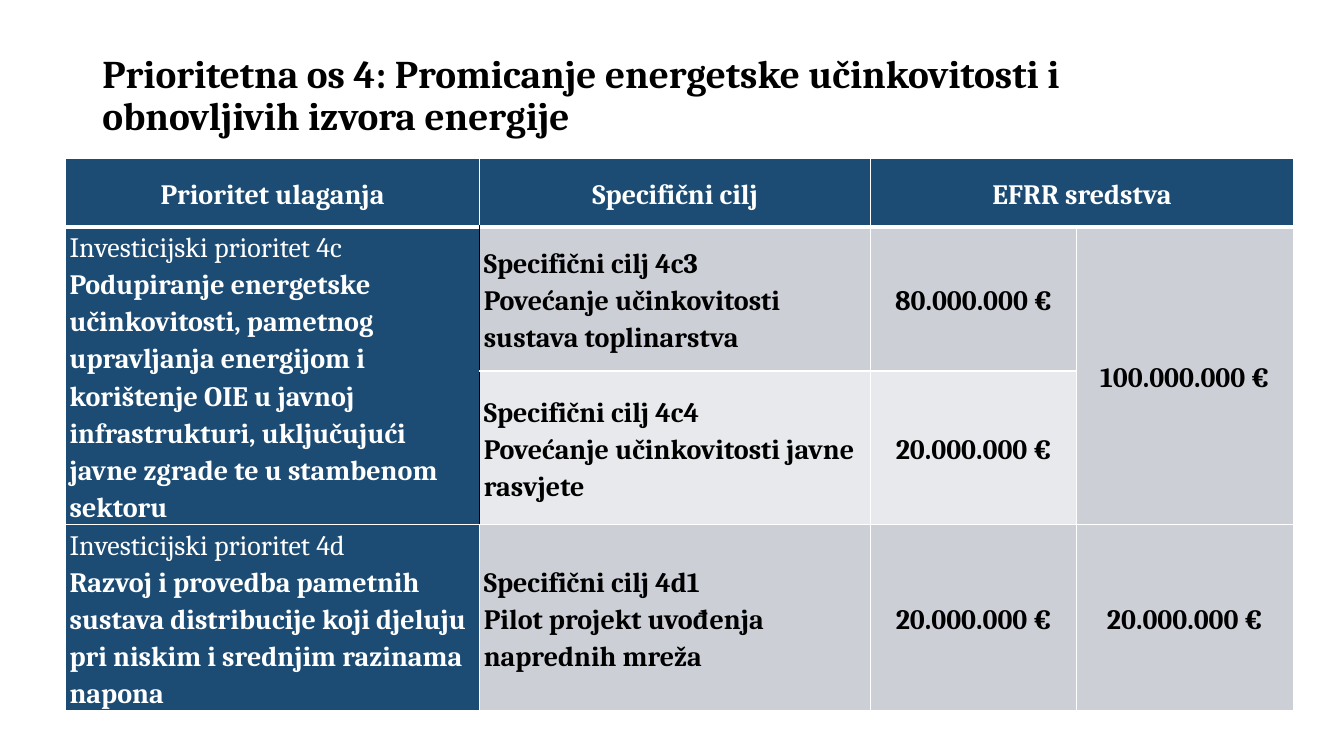
from pptx import Presentation
from pptx.dml.color import RGBColor
from pptx.enum.text import MSO_ANCHOR as ANCHOR, MSO_AUTO_SIZE as AUTO, PP_ALIGN as ALIGN
from pptx.oxml.ns import qn
from pptx.util import Pt
from lxml.etree import SubElement

NAVY = RGBColor(0x1C, 0x4C, 0x74)
GREY = RGBColor(0xCC, 0xD0, 0xD6)
PALE = RGBColor(0xE7, 0xE9, 0xEC)
WHITE = RGBColor(0xFF, 0xFF, 0xFF)
BLACK = RGBColor(0, 0, 0)

COLS = [295.9, 279.4, 146.9, 154.8]
ROWS = [49, 103, 101.5, 100.8]
CELLS = [
    [["Prioritet ulaganja"], ["Specifični cilj"], ["EFRR sredstva"], None],
    [["Investicijski prioritet 4c",
      "Podupiranje energetske učinkovitosti, pametnog upravljanja energijom i "
      "korištenje OIE u javnoj infrastrukturi, uključujući javne zgrade te u "
      "stambenom sektoru"],
     ["Specifični cilj 4c3", "Povećanje učinkovitosti sustava toplinarstva"],
     ["80.000.000 €"], ["100.000.000 €"]],
    [None,
     ["Specifični cilj 4c4", "Povećanje učinkovitosti javne rasvjete"],
     ["20.000.000 €"], None],
    [["Investicijski prioritet 4d",
      "Razvoj i provedba pametnih sustava distribucije koji djeluju pri niskim "
      "i srednjim razinama napona"],
     ["Specifični cilj 4d1", "Pilot projekt uvođenja naprednih mreža"],
     ["20.000.000 €"], ["20.000.000 €"]],
]
MERGES = [((0, 2), (0, 3)), ((1, 0), (2, 0)), ((1, 3), (2, 3))]


class SlideBuilder:
    font = "Cambria"
    cell_format = {
        "vertical_anchor": ANCHOR.MIDDLE,
        "margin_left": Pt(2.9), "margin_right": Pt(2.9),
        "margin_top": Pt(0.7), "margin_bottom": Pt(0),
    }

    def __init__(self, slide):
        self.slide = slide

    def apply(self, target, values):
        for name, value in values.items():
            setattr(target, name, value)

    def paragraph(self, p, text, size, color, bold, align, spacing):
        self.apply(p, {"alignment": align, "line_spacing": spacing})
        r = p.add_run()
        r.text = text
        self.apply(r.font, {"name": self.font, "size": Pt(size), "bold": bold})
        r.font.color.rgb = color

    def title(self, text, left, top, width, height):
        sp = self.slide.shapes.title
        self.apply(sp, {"left": Pt(left), "top": Pt(top),
                        "width": Pt(width), "height": Pt(height)})
        tf = sp.text_frame
        self.apply(tf, {"word_wrap": True, "auto_size": AUTO.NONE,
                        "vertical_anchor": ANCHOR.MIDDLE})
        self.paragraph(tf.paragraphs[0], text, 28, BLACK, True, ALIGN.LEFT, 0.9)

    def borders(self, cell, lines):
        tc_pr = cell._tc.get_or_add_tcPr()
        for side, (color, width) in lines.items():
            ln = SubElement(tc_pr, qn(f"a:ln{side}"), w=str(Pt(width)))
            fill = SubElement(ln, qn("a:solidFill"))
            SubElement(fill, qn("a:srgbClr"), val=str(color))

    def cell(self, cell, row, col, texts):
        self.apply(cell, self.cell_format)
        inner = row in (1, 2)
        self.borders(cell, {
            "L": (BLACK if inner and col == 1 else WHITE, 1),
            "R": (BLACK if inner and col == 0 else WHITE, 1),
            "T": (WHITE, 3 if row == 1 else 1),
            "B": (WHITE, 3 if row == 0 else 1),
        })
        dark = row == 0 or col == 0
        cell.fill.solid()
        cell.fill.fore_color.rgb = NAVY if dark else PALE if row == 2 else GREY
        align = ALIGN.CENTER if row == 0 or col > 1 else ALIGN.LEFT
        tf = cell.text_frame
        for i, text in enumerate(texts or []):
            p = tf.add_paragraph() if i else tf.paragraphs[0]
            bold = row == 0 or col > 0 or i > 0
            self.paragraph(p, text, 20, WHITE if dark else BLACK, bold, align, 1.15)

    def table(self, left, top, cols, rows, cells, merges):
        table = self.slide.shapes.add_table(
            len(rows), len(cols), Pt(left), Pt(top), Pt(sum(cols)), Pt(sum(rows))).table
        for column, width in zip(table.columns, cols):
            column.width = Pt(width)
        for row, height in zip(table.rows, rows):
            row.height = Pt(height)
        for first, last in merges:
            table.cell(*first).merge(table.cell(*last))
        for i, row in enumerate(cells):
            for j, texts in enumerate(row):
                self.cell(table.cell(i, j), i, j, texts)


def main():
    prs = Presentation()
    prs.slide_width, prs.slide_height = Pt(960), Pt(540)
    s = SlideBuilder(prs.slides.add_slide(prs.slide_layouts[5]))
    s.title("Prioritetna os 4: Promicanje energetske učinkovitosti i "
            "obnovljivih izvora energije", 66, 28.8, 828, 80.6)
    s.table(46.8, 113, COLS, ROWS, CELLS, MERGES)
    prs.save("out.pptx")


if __name__ == "__main__":
    main()
